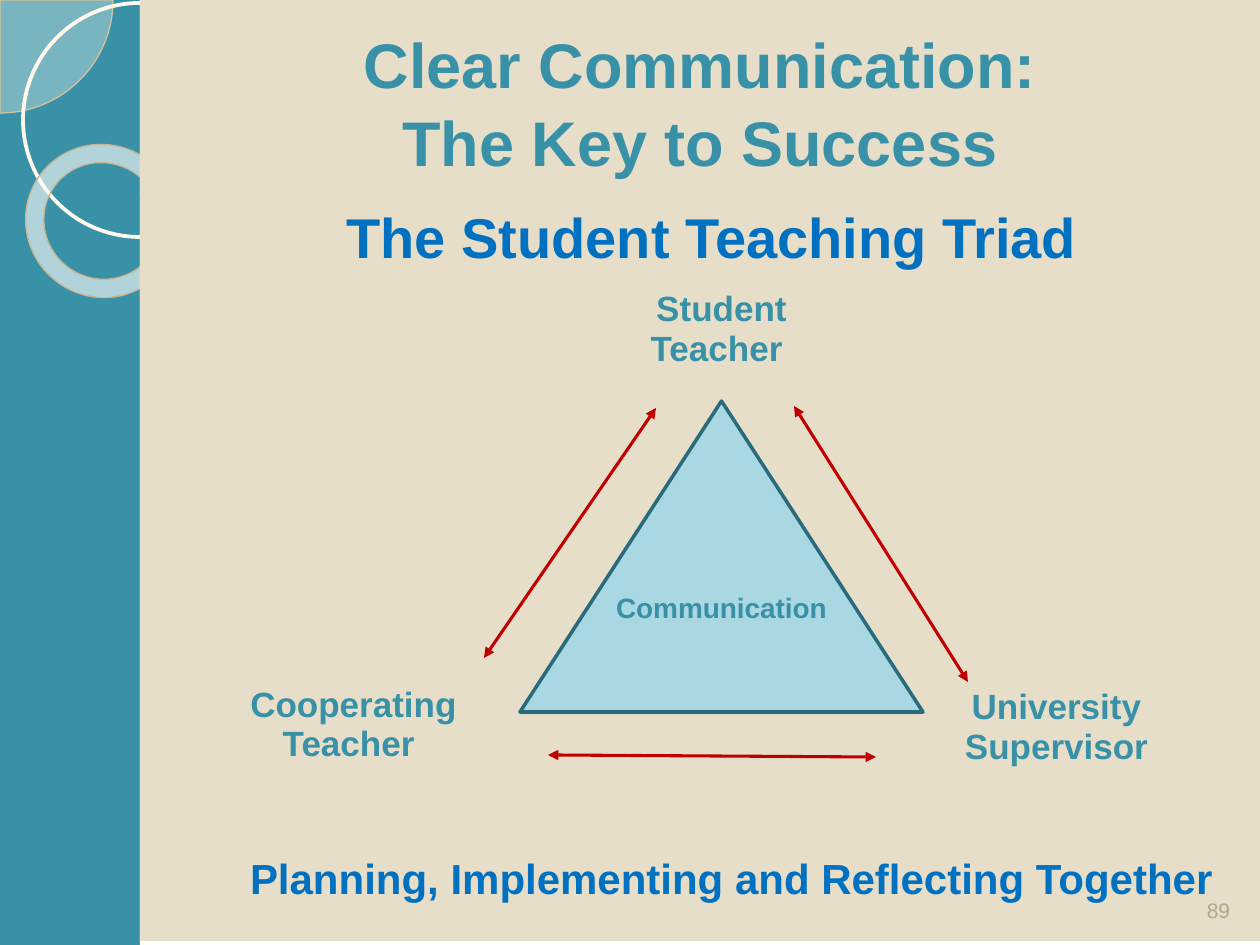
from lxml.etree import SubElement
from pptx import Presentation
from pptx.dml.color import RGBColor
from pptx.enum.shapes import MSO_CONNECTOR, MSO_SHAPE
from pptx.enum.text import MSO_ANCHOR, PP_ALIGN
from pptx.oxml.ns import qn
from pptx.util import Emu, Pt

PX = 914400 / 126  # EMU in one pixel
COLORS = {
    "teal": "3891A7", "sand": "E7DEC9", "white": "FFFFFF", "blue": "0070C0",
    "red": "C00000", "sky": "A9D7E2", "deep": "296B7C", "cream": "FEFCF8",
    "ivory": "FFF9EB", "tan": "D2C29E", "khaki": "C6B791", "number": "B4A688",
}
NO_TABLE_STYLE = "{2D5ABB26-0587-4C30-8999-92F81FD0307C}"


def px(*lengths):
    return [Emu(round(length * PX)) for length in lengths]


def rgb(name):
    return RGBColor.from_string(COLORS[name])


def set_fill(target, color, opacity=100):
    if color is None:
        target.fill.background()
        return
    target.fill.solid()
    target.fill.fore_color.rgb = rgb(color)
    if opacity < 100:
        tint = target.fill._xPr.find(qn("a:solidFill"))[0]
        SubElement(tint, qn("a:alpha"), val=str(opacity * 1000))


def add_shape(page, kind, place, fill=None, line=None, width=1, opacity=100, adjust=()):
    shape = page.shapes.add_shape(kind, *px(*place))
    shape.shadow.inherit = False
    set_fill(shape, fill, opacity)
    if line:
        shape.line.color.rgb = rgb(line)
        shape.line.width = Pt(width)
    else:
        shape.line.fill.background()
    for index, value in enumerate(adjust):
        shape.adjustments[index] = value
    return shape


def write(frame, text, size, color, bold=True, align=PP_ALIGN.CENTER):
    frame.text = text
    for para in frame.paragraphs:
        para.alignment = align
        para.font.name = "Arial"
        para.font.size = Pt(size)
        para.font.bold = bold
        para.font.color.rgb = rgb(color)


def set_frame(frame, anchor, left=13, top=6, right=13, bottom=6):
    frame.word_wrap = True
    frame.vertical_anchor = anchor
    frame.margin_left, frame.margin_top, frame.margin_right, frame.margin_bottom = px(
        left, top, right, bottom)


def add_label(page, left, top, height, text, size):
    """One-cell table without fill or grid."""
    table = page.shapes.add_table(1, 1, *px(left, top, 549, height)).table
    table.first_row = table.horz_banding = False
    table._tbl.tblPr.find(qn("a:tableStyleId")).text = NO_TABLE_STYLE
    cell = table.cell(0, 0)
    set_fill(cell, None)
    write(cell.text_frame, text, size, "teal")


def add_double_arrow(page, start, end):
    arrow = page.shapes.add_connector(MSO_CONNECTOR.STRAIGHT, *px(*start, *end))
    arrow.line.color.rgb = rgb("red")
    arrow.line.width = Pt(1.75)
    line = arrow.line._get_or_add_ln()
    for tag in ("a:headEnd", "a:tailEnd"):
        SubElement(line, qn(tag), type="triangle")
    SubElement(arrow._element.spPr, qn("a:effectLst"))


def add_sidebar(page):
    add_shape(page, MSO_SHAPE.PIE, (-113, -113, 226, 226), "cream", "tan", 0.75, 33, (0, 54))
    add_shape(page, MSO_SHAPE.OVAL, (23, 3, 234, 234), None, "ivory", 2.15)
    ring = add_shape(page, MSO_SHAPE.DONUT, (25, 145, 155, 152), "cream", "khaki", 0.75, 62, (0.12,))
    ring.rotation = 38.6
    add_shape(page, MSO_SHAPE.RECTANGLE, (140, 0, 1120, 945), "white")


def add_title(page):
    title = page.shapes.title
    page.shapes.element.append(title.element)  # bring in front of the sidebar
    title.left, title.top, title.width, title.height = px(140, 0, 1120, 195)
    set_fill(title, "sand")
    set_frame(title.text_frame, MSO_ANCHOR.MIDDLE, top=14)
    write(title.text_frame, "Clear Communication:\vThe Key to Success", 36, "teal")
    title.text_frame.paragraphs[0].line_spacing = 1.03


def add_body(page):
    body = add_shape(page, MSO_SHAPE.RECTANGLE, (140, 192, 1120, 749), "sand")
    set_frame(body.text_frame, MSO_ANCHOR.TOP, left=37, top=11)
    write(body.text_frame, "The Student Teaching Triad", 32, "blue")


def add_footer(page):
    number = page.shapes.add_textbox(*px(1187, 869, 63, 66))
    set_frame(number.text_frame, MSO_ANCHOR.BOTTOM, top=13, bottom=13)
    write(number.text_frame, "89", 12, "number", bold=False)

    motto = page.shapes.add_textbox(*px(237, 847, 999, 63))
    set_frame(motto.text_frame, MSO_ANCHOR.TOP)
    motto.text_frame.word_wrap = False
    write(motto.text_frame, "Planning, Implementing and Reflecting Together",
          24, "blue", align=PP_ALIGN.LEFT)


def add_triad(page):
    add_shape(page, MSO_SHAPE.ISOSCELES_TRIANGLE, (520, 401, 403, 311), "sky", "deep", 2)
    add_label(page, 447, 587, 72, "Communication", 16)
    for left, top, text in (
        (447, 284, "Student\nTeacher "),
        (79, 679, "Cooperating\nTeacher "),
        (782, 682, "University\vSupervisor"),
    ):
        add_label(page, left, top, 97, text, 20)
    for start, end in (
        ((656, 408), (484, 658)),
        ((968, 682), (794, 406)),
        ((876, 757), (548, 755)),
    ):
        add_double_arrow(page, start, end)


def main():
    deck = Presentation()
    deck.slide_width, deck.slide_height = px(1260, 945)
    page = deck.slides.add_slide(deck.slide_layouts[5])  # title only
    page.background.fill.solid()
    page.background.fill.fore_color.rgb = rgb("teal")
    add_sidebar(page)
    add_title(page)
    add_body(page)
    add_footer(page)
    add_triad(page)
    deck.save("out.pptx")


if __name__ == "__main__":
    main()
